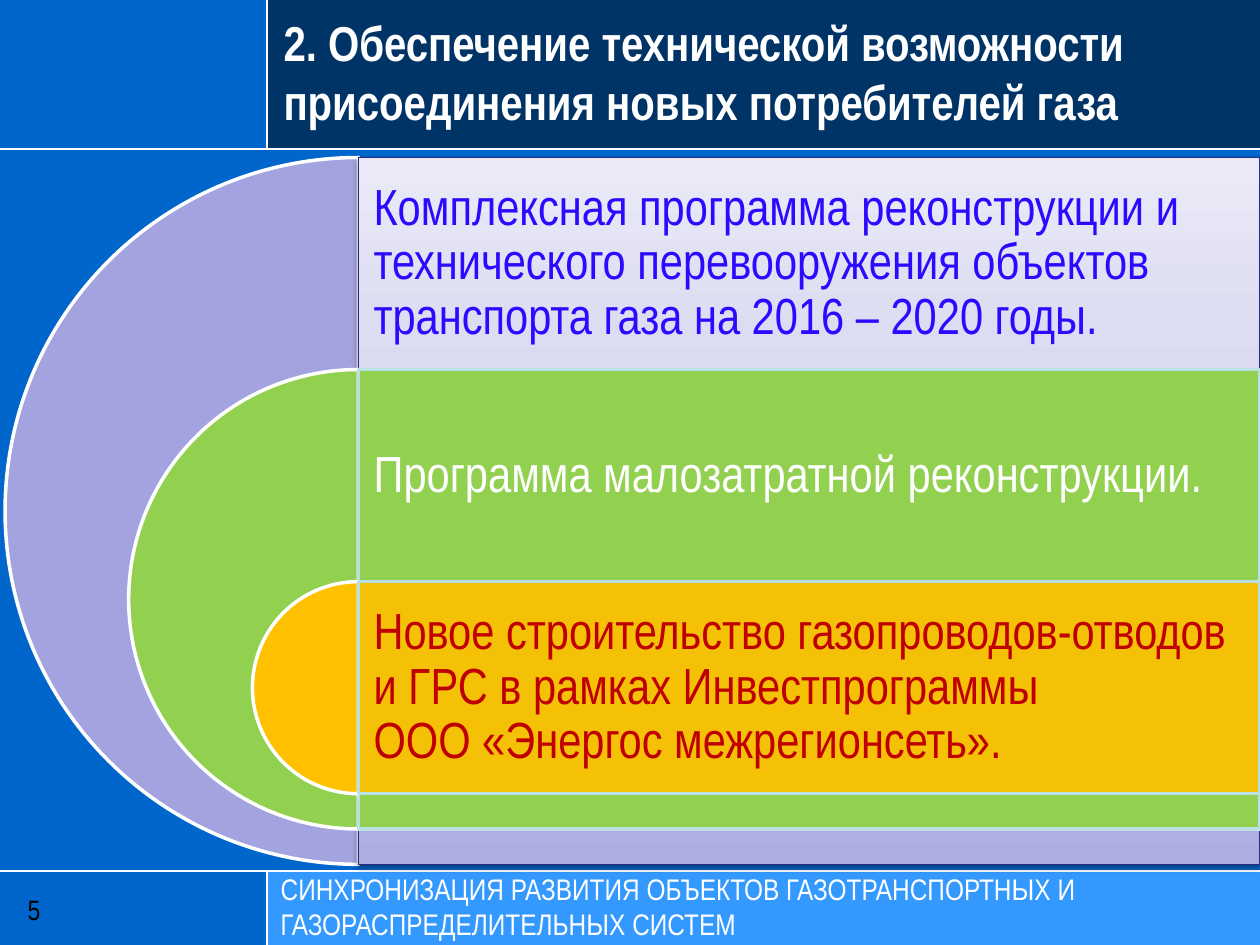
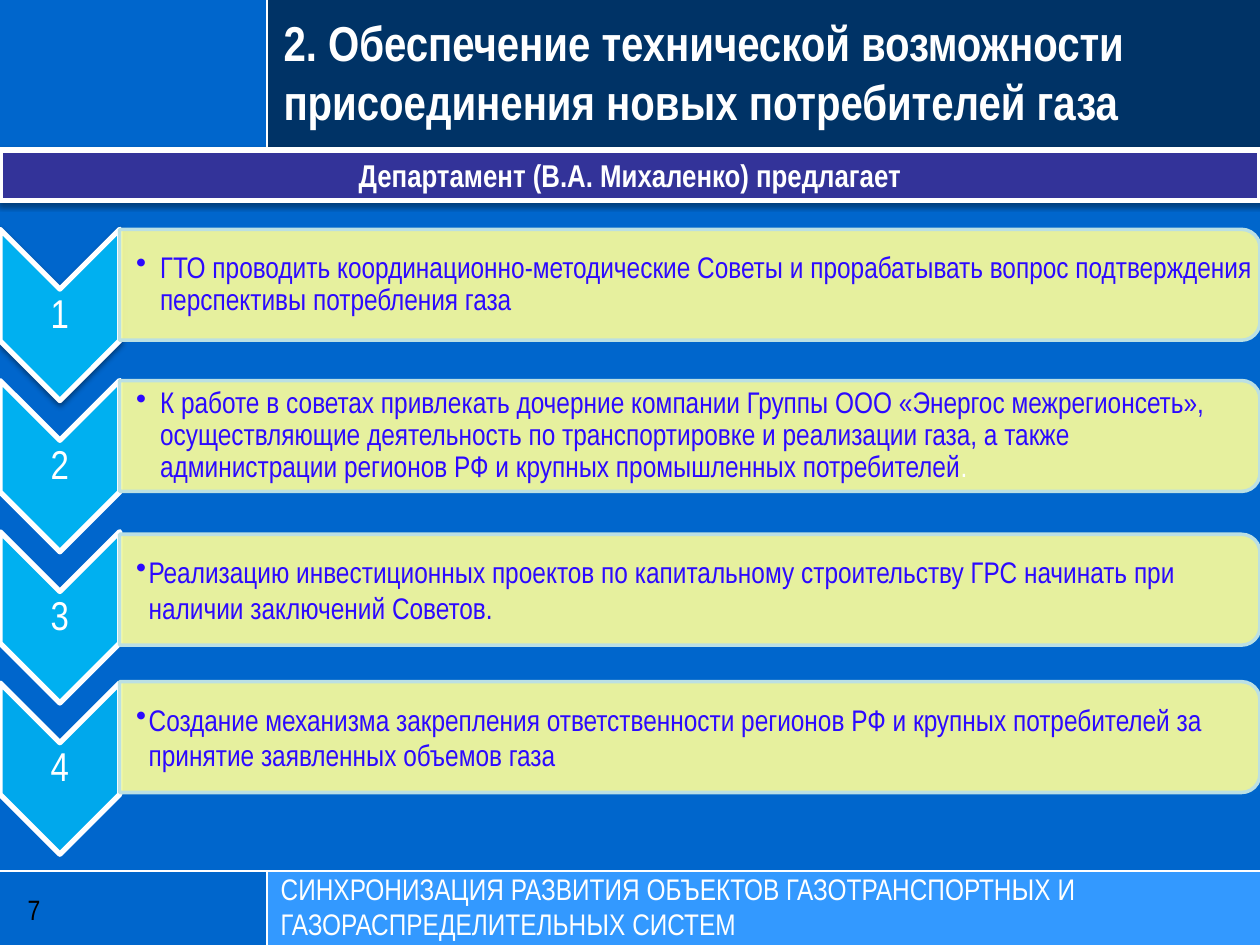
from copy import deepcopy
from lxml.etree import SubElement
from pptx import Presentation
from pptx.dml.color import RGBColor
from pptx.enum.shapes import MSO_CONNECTOR, MSO_SHAPE
from pptx.enum.text import MSO_ANCHOR, MSO_AUTO_SIZE, PP_ALIGN
from pptx.oxml.ns import qn
from pptx.util import Inches, Pt

FONT = "Arial Narrow"
WHITE = RGBColor(0xFF, 0xFF, 0xFF)
BLACK = RGBColor(0x00, 0x00, 0x00)
BLUE = RGBColor(0x00, 0x66, 0xCC)
NAVY = RGBColor(0x00, 0x33, 0x66)
FOOTER_BLUE = RGBColor(0x33, 0x99, 0xFF)
INDIGO = RGBColor(0x33, 0x33, 0x99)
INDIGO_EDGE = RGBColor(0x2A, 0x2A, 0x89)
VIOLET_TEXT = RGBColor(0x2C, 0x09, 0xFF)
LAVENDER = RGBColor(0xA3, 0xA3, 0xE0)
LAVENDER_STOPS = [(0, RGBColor(0xAD, 0xAD, 0xE1)), (0.35, RGBColor(0xC6, 0xC6, 0xE9)),
                  (1, RGBColor(0xE9, 0xE9, 0xF7))]
GREEN = RGBColor(0x92, 0xD0, 0x50)
AMBER = RGBColor(0xFF, 0xC0, 0x00)
RED = RGBColor(0xC0, 0x00, 0x00)
PALE_EDGE = RGBColor(0xBB, 0xE0, 0xE3)
SKY = RGBColor(0x00, 0xB0, 0xF0)
PALE_YELLOW = RGBColor(0xFF, 0xFF, 0x99)

PAGE_WIDTH, PAGE_HEIGHT = 10, 7.5
SIDE_WIDTH, HEADER_HEIGHT, FOOTER_TOP = 2.12, 1.18, 6.91
TITLE = "2. Обеспечение технической возможности присоединения новых потребителей газа"
FOOTER = "СИНХРОНИЗАЦИЯ РАЗВИТИЯ ОБЪЕКТОВ ГАЗОТРАНСПОРТНЫХ И ГАЗОРАСПРЕДЕЛИТЕЛЬНЫХ СИСТЕМ"

PROGRAMS = [
    ("Комплексная программа реконструкции и технического перевооружения объектов "
     "транспорта газа на 2016 – 2020 годы.", VIOLET_TEXT, LAVENDER),
    ("Программа малозатратной реконструкции.", WHITE, GREEN),
    ("Новое строительство газопроводов-отводов и ГРС в рамках Инвестпрограммы\v"
     "ООО «Энергос межрегионсеть».", RED, AMBER),
]

# Card top, bullet indent, line spacing, text, white ending
PROPOSALS = [
    (1.82, 0.19, 0.9, "ГТО проводить координационно-методические Советы и прорабатывать "
     "вопрос подтверждения перспективы потребления газа", ""),
    (3.02, 0.19, 0.9, "К работе в советах привлекать дочерние компании Группы ООО "
     "«Энергос межрегионсеть», осуществляющие деятельность по транспортировке и реализации "
     "газа, а также администрации регионов РФ и крупных промышленных потребителей", "."),
    (4.24, 0.1, 1, "Реализацию инвестиционных проектов по капитальному строительству ГРС "
     "начинать при наличии заключений Советов.", ""),
    (5.41, 0.1, 1, "Создание механизма закрепления ответственности регионов РФ и крупных "
     "потребителей за принятие заявленных объемов газа", ""),
]


def inches(*lengths):
    return [Inches(length) for length in lengths]


def write_text(shape, text, size, color, bold=False, align=PP_ALIGN.LEFT,
               anchor=MSO_ANCHOR.TOP, insets=(0.1, 0.05, 0.1, 0.05), spacing=None):
    frame = shape.text_frame
    frame.text = text
    frame.word_wrap = True
    frame.auto_size = MSO_AUTO_SIZE.NONE
    frame.vertical_anchor = anchor
    (frame.margin_left, frame.margin_top,
     frame.margin_right, frame.margin_bottom) = inches(*insets)
    para = frame.paragraphs[0]
    para.alignment = align
    para.line_spacing = spacing
    for span in para.runs:
        style_span(span, size, color, bold)
    return para


def style_span(span, size, color, bold=False):
    span.font.name, span.font.size, span.font.bold = FONT, Pt(size), bold
    span.font.color.rgb = color


def add_text(page, box, *args, **options):
    return write_text(page.shapes.add_textbox(*inches(*box)), *args, **options)


def add_block(page, kind, box, fill, edge=None, width=0, opacity=100):
    shape = page.shapes.add_shape(kind, *inches(*box))
    shape.shadow.inherit = False
    shape.fill.solid()
    shape.fill.fore_color.rgb = fill
    if opacity < 100:
        color = shape.fill._xPr.find(".//" + qn("a:srgbClr"))
        SubElement(color, qn("a:alpha"), val=str(opacity * 1000))
    if edge is None:
        shape.line.fill.background()
    else:
        shape.line.color.rgb = edge
        shape.line.width = Pt(width)
    return shape


def add_turned_block(page, kind, box, *args, **options):
    """Fill the box with a shape rotated by a quarter turn."""
    left, top, width, height = box
    shift = (height - width) / 2
    shape = add_block(page, kind, (left - shift, top + shift, height, width), *args, **options)
    shape.rotation = 90
    return shape


def add_shadow(shape):
    effects = shape._element.spPr.find(qn("a:effectLst"))
    shadow = SubElement(effects, qn("a:outerShdw"), blurRad=str(Pt(3.1)), dist=str(Pt(1.6)),
                        dir="5400000", rotWithShape="0")
    color = SubElement(shadow, qn("a:srgbClr"), val=str(BLACK))
    SubElement(color, qn("a:alpha"), val="38000")


def fill_lavender_gradient(shape):
    shape.fill.gradient()
    shape.fill.gradient_angle = 90
    stop_list = shape._element.spPr.find(".//" + qn("a:gsLst"))
    stop_list.append(deepcopy(stop_list[-1]))
    for stop, (position, color) in zip(shape.fill.gradient_stops, LAVENDER_STOPS):
        stop.position = position
        stop.color.rgb = color


def add_rule(page, start, end):
    rule = page.shapes.add_connector(MSO_CONNECTOR.STRAIGHT, *inches(*start, *end))
    rule.line.color.rgb = WHITE
    rule.line.width = Pt(1.25)
    SubElement(rule._element.spPr, qn("a:effectLst"))


def add_page(deck, number):
    """Shared frame: background, header and footer bands, rules, title, number."""
    page = deck.slides.add_slide(deck.slide_layouts[5])
    page.background.fill.solid()
    page.background.fill.fore_color.rgb = BLUE
    band_width = PAGE_WIDTH - SIDE_WIDTH
    footer_height = PAGE_HEIGHT - FOOTER_TOP
    add_block(page, MSO_SHAPE.RECTANGLE, (SIDE_WIDTH, 0, band_width, HEADER_HEIGHT), NAVY)
    add_block(page, MSO_SHAPE.RECTANGLE,
              (SIDE_WIDTH, FOOTER_TOP, band_width, footer_height), FOOTER_BLUE)
    add_rule(page, (SIDE_WIDTH, 0), (SIDE_WIDTH, HEADER_HEIGHT))
    add_rule(page, (SIDE_WIDTH, FOOTER_TOP), (SIDE_WIDTH, PAGE_HEIGHT))
    for height in (HEADER_HEIGHT, FOOTER_TOP):
        add_rule(page, (0, height), (PAGE_WIDTH, height))

    # Title goes in front of the header band
    title = page.shapes.title
    title.left, title.top, title.width, title.height = inches(2.15, 0.05, 7.85, 1.04)
    write_text(title, TITLE, 28, WHITE, bold=True)
    page.shapes._spTree.append(title._element)

    add_text(page, (0.22, 6.96, 1.63, 0.52), str(number), 16, BLACK,
             anchor=MSO_ANCHOR.MIDDLE, insets=(0, 0, 0, 0))
    add_text(page, (2.13, 6.86, 7.87, 0.67), FOOTER, 17, WHITE)
    return page


def add_nested_programs(page, box):
    """Half discs nested on a common axis, each with a panel to its right."""
    left, top, width, height = box
    axis = left + height / 2
    panel_width = width - height / 2
    row_height = height * 0.3
    for index, (text, text_color, fill) in enumerate(PROGRAMS):
        diameter = height * (1 - 0.35 * index)
        row_top = top + row_height * index
        disc = add_block(page, MSO_SHAPE.PIE,
                         (axis - diameter / 2, row_top, diameter, diameter), fill, WHITE, 2)
        disc.adjustments[0], disc.adjustments[1] = 54, 162  # from 90 to 270 degrees
        panel_box = (axis, row_top, panel_width, diameter)
        if index == 0:
            panel = add_block(page, MSO_SHAPE.RECTANGLE, panel_box, fill, INDIGO_EDGE, 0.75)
            fill_lavender_gradient(panel)
            add_shadow(panel)
        else:
            add_block(page, MSO_SHAPE.RECTANGLE, panel_box, fill, PALE_EDGE, 2,
                      opacity=90 if fill == AMBER else 100)
        add_text(page, (axis, row_top, panel_width, row_height), text, 29, text_color,
                 anchor=MSO_ANCHOR.MIDDLE, insets=(0.12,) * 4, spacing=0.9)


def add_banner(page, box, text):
    banner = add_block(page, MSO_SHAPE.RECTANGLE, box, INDIGO, WHITE, 3)
    add_shadow(banner)
    write_text(banner, text, 18, WHITE, bold=True, align=PP_ALIGN.CENTER,
               anchor=MSO_ANCHOR.MIDDLE)


def add_chevron(page, box, number):
    left, top, width, height = box
    chevron = add_turned_block(page, MSO_SHAPE.CHEVRON, box, SKY, WHITE, 3,
                               opacity=90 if number == len(PROPOSALS) else 100)
    if number == 1:
        add_shadow(chevron)
    add_text(page, (left, top + width / 2, width, height - width), str(number), 23, WHITE,
             align=PP_ALIGN.CENTER, anchor=MSO_ANCHOR.MIDDLE, insets=(0.02,) * 4, spacing=0.9)


def add_card(page, box, indent, spacing, text, ending):
    left, top, width, height = box
    add_turned_block(page, MSO_SHAPE.ROUND_2_SAME_RECTANGLE, box, PALE_YELLOW, PALE_EDGE, 2,
                     opacity=90)
    para = add_text(page, (left, top + 0.04, width - 0.04, height - 0.08), text, 17,
                    VIOLET_TEXT, anchor=MSO_ANCHOR.MIDDLE, insets=(0.13, 0.01, 0.01, 0.01),
                    spacing=spacing)
    properties = para._p.get_or_add_pPr()
    properties.set("marL", str(Inches(indent)))
    properties.set("indent", str(-Inches(indent)))
    SubElement(properties, qn("a:buChar"), char="•")
    if ending:
        span = para.add_run()
        span.text = ending
        style_span(span, 17, WHITE)


def add_proposals(page, box):
    """Chevrons at equal steps on the left, a card beside each."""
    left, top, width, step = box
    chevron_width = 0.95
    for index, (card_top, *content) in enumerate(PROPOSALS):
        add_chevron(page, (left, top + step * index, chevron_width, 1.36), index + 1)
        add_card(page, (left + chevron_width, card_top, width - chevron_width, 0.88), *content)


def main():
    deck = Presentation()
    deck.slide_width, deck.slide_height = inches(PAGE_WIDTH, PAGE_HEIGHT)

    # Programs
    page = add_page(deck, 5)
    add_nested_programs(page, (0.04, 1.25, 9.96, 5.61))

    # Proposals
    page = add_page(deck, 7)
    add_banner(page, (0, 1.19, PAGE_WIDTH, 0.4), "Департамент (В.А. Михаленко) предлагает")
    add_proposals(page, (0, 1.82, PAGE_WIDTH, 1.2))

    deck.save("out.pptx")


if __name__ == "__main__":
    main()
